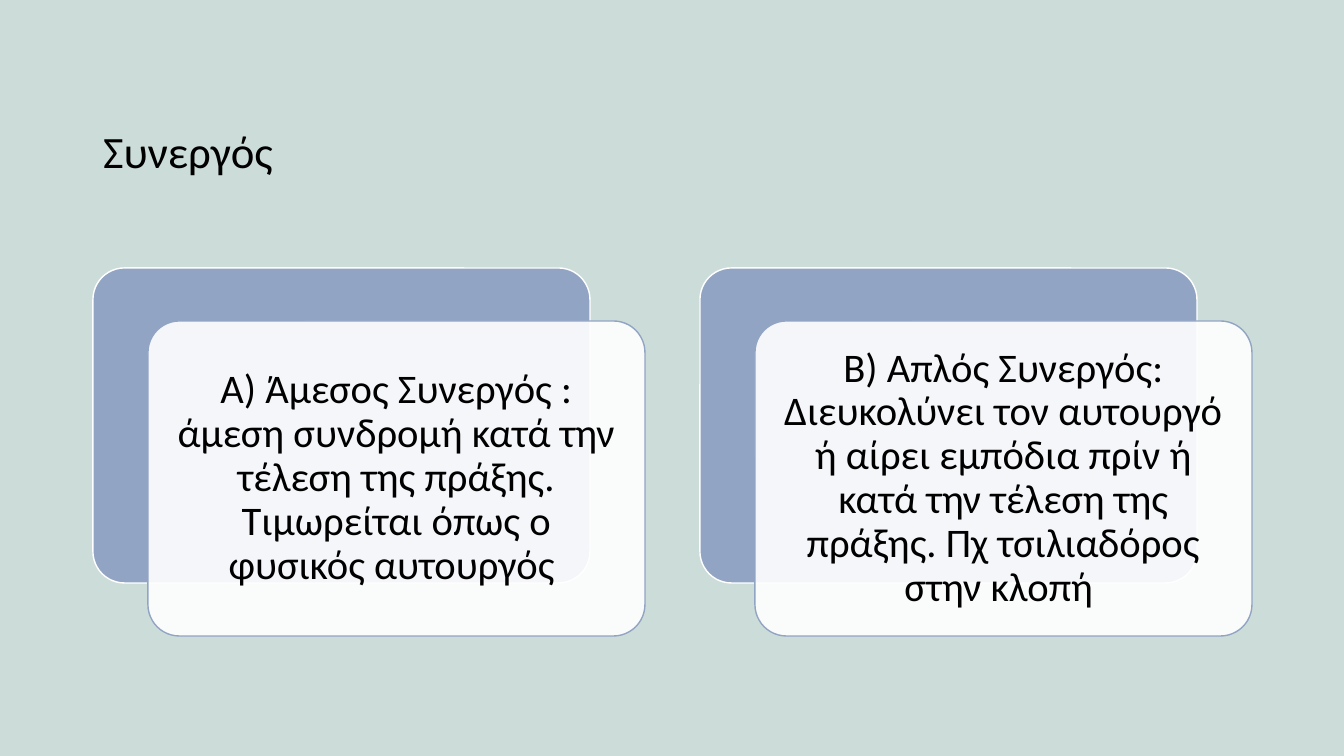
import pptx
import pptx.dml.color
import pptx.enum.shapes
import pptx.enum.text
import pptx.oxml.ns
import pptx.util
from lxml import etree

BACKGROUND = pptx.dml.color.RGBColor(0xCC, 0xDD, 0xD9)
BLUE = pptx.dml.color.RGBColor(0x92, 0xA4, 0xC4)
WHITE = pptx.dml.color.RGBColor(0xFF, 0xFF, 0xFF)
BLACK = pptx.dml.color.RGBColor(0x00, 0x00, 0x00)

SLIDE_WIDTH, SLIDE_HEIGHT = 1344, 756
LEFT, CARD_TOP = 93, 268
CARD_WIDTH, CARD_HEIGHT = 497, 315
CARD_PITCH = 607
SHIFT_X, SHIFT_Y = 55, 53

ACCOMPLICES = [
    "Α) Άμεσος Συνεργός : άμεση συνδρομή κατά την τέλεση της πράξης. "
    "Τιμωρείται όπως ο φυσικός αυτουργός ",
    "Β) Απλός Συνεργός: Διευκολύνει τον αυτουργό ή αίρει εμπόδια πρίν ή "
    "κατά την τέλεση της πράξης. Πχ τσιλιαδόρος στην κλοπή ",
]


class SlideBuilder:
    """Draws the elements of one slide in a shared style."""

    font_name = "Calibri"
    emu_per_px = pptx.util.Inches(1) / 100.8

    def __init__(self, presentation):
        presentation.slide_width = self.px(SLIDE_WIDTH)
        presentation.slide_height = self.px(SLIDE_HEIGHT)
        self.slide = presentation.slides.add_slide(presentation.slide_layouts[5])
        self.slide.background.fill.solid()
        self.slide.background.fill.fore_color.rgb = BACKGROUND

    def px(self, length):
        return pptx.util.Emu(round(length * self.emu_per_px))

    def add_text(self, frame, text, size, alignment):
        frame.word_wrap = True
        frame.auto_size = pptx.enum.text.MSO_AUTO_SIZE.NONE
        frame.vertical_anchor = pptx.enum.text.MSO_ANCHOR.MIDDLE
        paragraph = frame.paragraphs[0]
        paragraph.alignment = alignment
        paragraph.line_spacing = 0.9
        run = paragraph.add_run()
        run.text = text
        run.font.name = self.font_name
        run.font.size = pptx.util.Pt(size)
        run.font.color.rgb = BLACK

    def title(self, text, left, top, width, height):
        heading = self.slide.shapes.title
        heading.left, heading.top = self.px(left), self.px(top)
        heading.width, heading.height = self.px(width), self.px(height)
        self.add_text(heading.text_frame, text, 32, pptx.enum.text.PP_ALIGN.LEFT)

    def panel(self, left, top, fill, outline):
        panel = self.slide.shapes.add_shape(
            pptx.enum.shapes.MSO_SHAPE.ROUNDED_RECTANGLE,
            self.px(left), self.px(top), self.px(CARD_WIDTH), self.px(CARD_HEIGHT))
        panel.adjustments[0] = 0.1
        panel.shadow.inherit = False
        panel.fill.solid()
        panel.fill.fore_color.rgb = fill
        panel.line.color.rgb = outline
        panel.line.width = pptx.util.Pt(1)
        return panel

    def card(self, text, left, top):
        self.panel(left, top, BLUE, WHITE)
        front = self.panel(left + SHIFT_X, top + SHIFT_Y, WHITE, BLUE)
        properties = front.element.find(pptx.oxml.ns.qn("p:spPr"))
        fill = properties.find(pptx.oxml.ns.qn("a:solidFill"))
        colour = fill.find(pptx.oxml.ns.qn("a:srgbClr"))
        etree.SubElement(colour, pptx.oxml.ns.qn("a:alpha"), val="90000")
        frame = front.text_frame
        frame.margin_left = frame.margin_right = self.px(12)
        frame.margin_top = frame.margin_bottom = self.px(12)
        self.add_text(frame, text, 29, pptx.enum.text.PP_ALIGN.CENTER)


def main():
    presentation = pptx.Presentation()
    builder = SlideBuilder(presentation)
    builder.title("Συνεργός", LEFT, 81, 1159, 146)
    for column, description in enumerate(ACCOMPLICES):
        builder.card(description, LEFT + column * CARD_PITCH, CARD_TOP)
    presentation.save("out.pptx")


if __name__ == "__main__":
    main()
